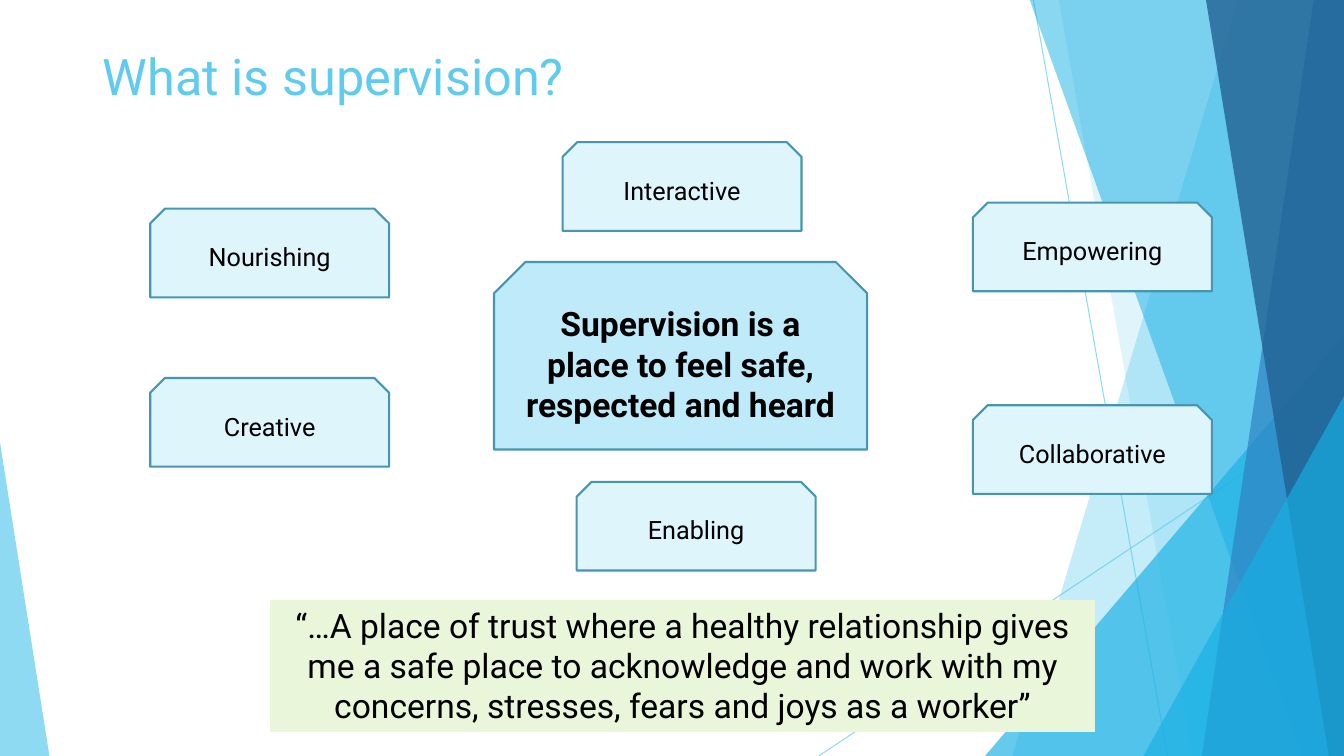
from dataclasses import dataclass
from typing import Any, Union

import lxml.etree
import pptx
import pptx.dml.color
import pptx.enum.shapes
import pptx.enum.text
import pptx.oxml.ns
import pptx.util

Inches = pptx.util.Inches
Pt = pptx.util.Pt
SHAPE = pptx.enum.shapes.MSO_SHAPE
ALIGN = pptx.enum.text.PP_ALIGN
ANCHOR = pptx.enum.text.MSO_ANCHOR
qn = pptx.oxml.ns.qn

WIDTH, HEIGHT, TOP = 13.33, 7.5, -0.01
FONT = "Roboto"
COLORS = {
    "sky": "5FCBEF",
    "cyan": "17B0E4",
    "blue": "2E83C3",
    "navy": "226292",
    "center": "BFEAF9",
    "quality": "DFF5FC",
    "outline": "4696B1",
    "quote": "EAF6D9",
    "text": "000000",
}


@dataclass
class Ray:
    x1: float
    y1: float
    x2: float
    y2: float


@dataclass
class Band:
    top_x: float
    bottom_x: float
    color: str
    alpha: int


@dataclass
class Triangle:
    left: float
    top: float
    width: float
    apex: float
    color: str
    alpha: int


@dataclass
class Card:
    text: str
    left: float
    top: float
    width: float = 2.37
    height: float = 0.88
    fill: str = "quality"
    size: int = 18
    bold: bool = False
    shape: Any = SHAPE.SNIP_2_SAME_RECTANGLE
    outlined: bool = True
    anchor: Any = ANCHOR.MIDDLE


RAYS = [Ray(10.25, 0, 11.58, HEIGHT), Ray(WIDTH, 4.03, 8.12, HEIGHT)]
FACETS: list[Union[Band, Triangle]] = [
    Band(12.28, 10.04, "sky", 36),
    Band(10.5, 11.83, "sky", 20),
    Triangle(9.77, 3.33, 3.56, 1, "cyan", 66),
    Band(10.21, 12.91, "cyan", 50),
    Band(13.03, 11.92, "blue", 70),
    Band(11.96, 13.18, "navy", 80),
    Triangle(11.34, 3.93, 1.99, 1, "cyan", 66),
    Triangle(0, 4.39, 0.49, 0, "sky", 70),
]
CARDS = [
    Card("Supervision is a place to feel safe, respected and heard",
         4.9, 2.6, 3.7, 1.86, "center", 24, True),
    Card("Nourishing", 1.49, 2.07),
    Card("Interactive", 5.58, 1.41),
    Card("Creative", 1.49, 3.75),
    Card("Enabling", 5.72, 4.78),
    Card("Empowering", 9.65, 2.01),
    Card("Collaborative", 9.65, 4.02),
    Card("“…A place of trust where a healthy relationship gives me a safe place "
         "to acknowledge and work with my concerns, stresses, fears and joys as a worker”",
         2.68, 5.95, 8.18, 1.31, "quote", 24,
         shape=SHAPE.RECTANGLE, outlined=False, anchor=ANCHOR.TOP),
]


def rgb(name: str) -> pptx.dml.color.RGBColor:
    return pptx.dml.color.RGBColor.from_string(COLORS[name])


def paint(sp: Any, color: str) -> None:
    sp.shadow.inherit = False
    sp.fill.solid()
    sp.fill.fore_color.rgb = rgb(color)
    sp.line.fill.background()


def set_alpha(sp: Any, percent: int) -> None:
    clr = next(sp._element.spPr.iter(qn("a:srgbClr")))
    lxml.etree.SubElement(clr, qn("a:alpha"), val=str(percent * 1000))


def write(sp: Any, text: str, color: str, align: Any, anchor: Any, **formats: Any) -> None:
    tf = sp.text_frame
    tf.word_wrap = True
    tf.vertical_anchor = anchor
    p = tf.paragraphs[0]
    p.alignment = align
    r = p.add_run()
    r.text = text
    r.font.color.rgb = rgb(color)
    for name, value in {"name": FONT, **formats}.items():
        setattr(r.font, name, value)


def draw_ray(s: Any, ray: Ray) -> None:
    ends = [Inches(v) for v in (ray.x1, ray.y1, ray.x2, ray.y2)]
    line = s.shapes.add_connector(pptx.enum.shapes.MSO_CONNECTOR.STRAIGHT, *ends)
    line.line.color.rgb = rgb("sky")
    line.line.width = Pt(0.75)
    set_alpha(line, 70)
    lxml.etree.SubElement(line._element.spPr, qn("a:effectLst"))


def draw_facet(s: Any, facet: Union[Band, Triangle]) -> None:
    if isinstance(facet, Band):
        points = [(facet.top_x, TOP), (WIDTH, TOP), (WIDTH, HEIGHT), (facet.bottom_x, HEIGHT)]
        corners = [(Inches(x), Inches(y)) for x, y in points]
        builder = s.shapes.build_freeform(*corners[0])
        builder.add_line_segments(corners[1:], close=True)
        sp = builder.convert_to_shape()
    else:
        sp = s.shapes.add_shape(SHAPE.ISOSCELES_TRIANGLE, Inches(facet.left), Inches(facet.top),
                                Inches(facet.width), Inches(HEIGHT - facet.top))
        sp.adjustments[0] = facet.apex
    paint(sp, facet.color)
    set_alpha(sp, facet.alpha)


def draw_title(s: Any, text: str) -> None:
    sp = s.shapes.add_textbox(Inches(0.92), Inches(0.4), Inches(11.36), Inches(0.88))
    write(sp, text, "sky", ALIGN.LEFT, ANCHOR.TOP, size=Pt(36))


def draw_card(s: Any, card: Card) -> None:
    sp = s.shapes.add_shape(card.shape, Inches(card.left), Inches(card.top),
                            Inches(card.width), Inches(card.height))
    paint(sp, card.fill)
    if card.outlined:
        sp.line.color.rgb = rgb("outline")
        sp.line.width = Pt(1.5)
    write(sp, card.text, "text", ALIGN.CENTER, card.anchor, size=Pt(card.size), bold=card.bold)


def main() -> None:
    prs = pptx.Presentation()
    prs.slide_width, prs.slide_height = Inches(WIDTH), Inches(HEIGHT)
    s = prs.slides.add_slide(prs.slide_layouts[6])
    for ray in RAYS:
        draw_ray(s, ray)
    for facet in FACETS:
        draw_facet(s, facet)
    draw_title(s, "What is supervision?")
    for card in CARDS:
        draw_card(s, card)
    prs.save("out.pptx")


if __name__ == "__main__":
    main()
